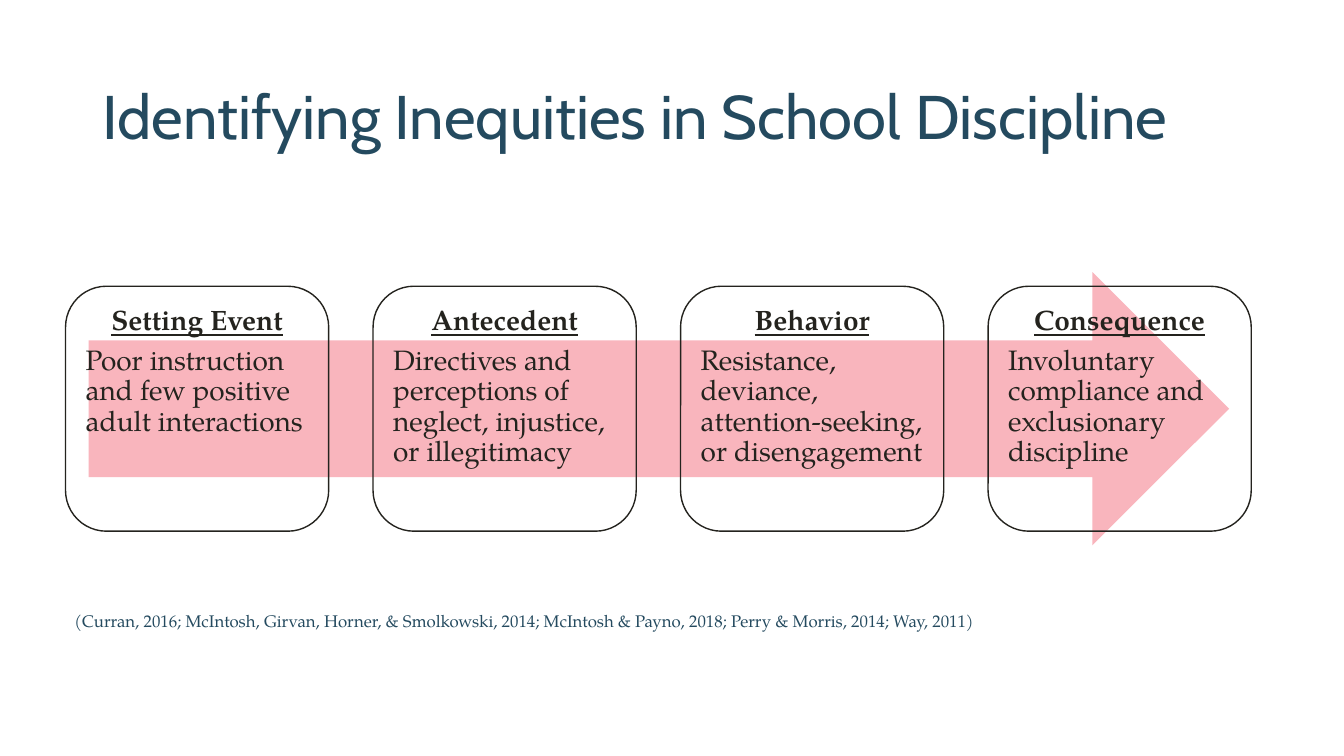
from pptx import Presentation
from pptx.dml.color import RGBColor
from pptx.enum.shapes import MSO_SHAPE
from pptx.enum.text import MSO_ANCHOR, MSO_AUTO_SIZE, PP_ALIGN
from pptx.util import Inches, Pt

COLORS = {"navy": "244A5F", "ink": "24231E", "pink": "F9B5BD"}
TITLE_FONT = "Cabin"
BODY_FONT = "TeX Gyre Pagella"

STAGES = [
    ("Setting Event", "Poor instruction and few positive adult interactions"),
    ("Antecedent", "Directives and perceptions of neglect, injustice, or illegitimacy"),
    ("Behavior", "Resistance, deviance, attention-seeking, or disengagement"),
    ("Consequence", "Involuntary compliance and exclusionary discipline"),
]
CARD_LEFT, CARD_TOP, CARD_STEP = 0.65, 2.84, 3.05
CARD_WIDTH, CARD_HEIGHT = 2.61, 2.43
CARD_INSET = 0.12


class SlideBuilder:
    """Holds the style and the current slide."""

    def __init__(self, presentation):
        self.slide = presentation.slides.add_slide(presentation.slide_layouts[5])

    def color(self, name):
        return RGBColor.from_string(COLORS[name])

    def place(self, left, top, width, height):
        return [Inches(value) for value in (left, top, width, height)]

    def format_runs(self, paragraph, font, size, color, bold=False, underline=False):
        for run in paragraph.runs:
            run.font.name = font
            run.font.size = Pt(size)
            run.font.color.rgb = self.color(color)
            run.font.bold = bold
            run.font.underline = underline

    def title(self, text, *box):
        shape = self.slide.shapes.title
        shape.left, shape.top, shape.width, shape.height = self.place(*box)
        frame = shape.text_frame
        frame.text = text
        frame.word_wrap = True
        frame.auto_size = MSO_AUTO_SIZE.NONE
        frame.vertical_anchor = MSO_ANCHOR.MIDDLE
        paragraph = frame.paragraphs[0]
        paragraph.alignment = PP_ALIGN.LEFT
        paragraph.line_spacing = 0.9
        self.format_runs(paragraph, TITLE_FONT, 44, "navy")

    def shape(self, kind, *box, fill=None, line=None):
        shape = self.slide.shapes.add_shape(kind, *self.place(*box))
        shape.shadow.inherit = False
        if fill:
            shape.fill.solid()
            shape.fill.fore_color.rgb = self.color(fill)
        else:
            shape.fill.background()
        if line:
            shape.line.color.rgb = self.color(line)
            shape.line.width = Pt(1)
        else:
            shape.line.fill.background()

    def text_box(self, *box):
        frame = self.slide.shapes.add_textbox(*self.place(*box)).text_frame
        frame.word_wrap = True
        return frame

    def card(self, left, heading, description):
        self.shape(MSO_SHAPE.ROUNDED_RECTANGLE, left, CARD_TOP,
                   CARD_WIDTH, CARD_HEIGHT, line="ink")
        frame = self.text_box(left + CARD_INSET, CARD_TOP + CARD_INSET,
                              CARD_WIDTH - 2 * CARD_INSET, CARD_HEIGHT - 2 * CARD_INSET)
        frame.margin_left = frame.margin_right = Inches(0.08)
        frame.margin_top = frame.margin_bottom = Inches(0.08)
        frame.text = f"{heading}\n{description}"
        for paragraph, is_heading in zip(frame.paragraphs, (True, False)):
            paragraph.alignment = PP_ALIGN.CENTER if is_heading else PP_ALIGN.LEFT
            paragraph.line_spacing = 0.9
            paragraph.space_after = Pt(7)
            self.format_runs(paragraph, BODY_FONT, 20, "ink", is_heading, is_heading)

    def citation(self, text, *box):
        frame = self.text_box(*box)
        frame.auto_size = MSO_AUTO_SIZE.SHAPE_TO_FIT_TEXT
        frame.text = text
        self.format_runs(frame.paragraphs[0], BODY_FONT, 12, "navy")


def main():
    presentation = Presentation()
    presentation.slide_width = Inches(13.33)
    presentation.slide_height = Inches(7.5)
    builder = SlideBuilder(presentation)

    # Title
    builder.title("Identifying Inequities in School Discipline", 0.92, 0.46, 11.5, 1.45)

    # Arrow behind the four stages
    builder.shape(MSO_SHAPE.RIGHT_ARROW, 0.88, 2.7, 11.31, 2.71, fill="pink")
    for index, (heading, description) in enumerate(STAGES):
        builder.card(CARD_LEFT + index * CARD_STEP, heading, description)

    # Sources
    builder.citation(
        "(Curran, 2016; McIntosh, Girvan, Horner, & Smolkowski, 2014; "
        "McIntosh & Payno, 2018; Perry & Morris, 2014; Way, 2011)",
        0.64, 6.01, 9.26, 0.3)

    presentation.save("out.pptx")


if __name__ == "__main__":
    main()
